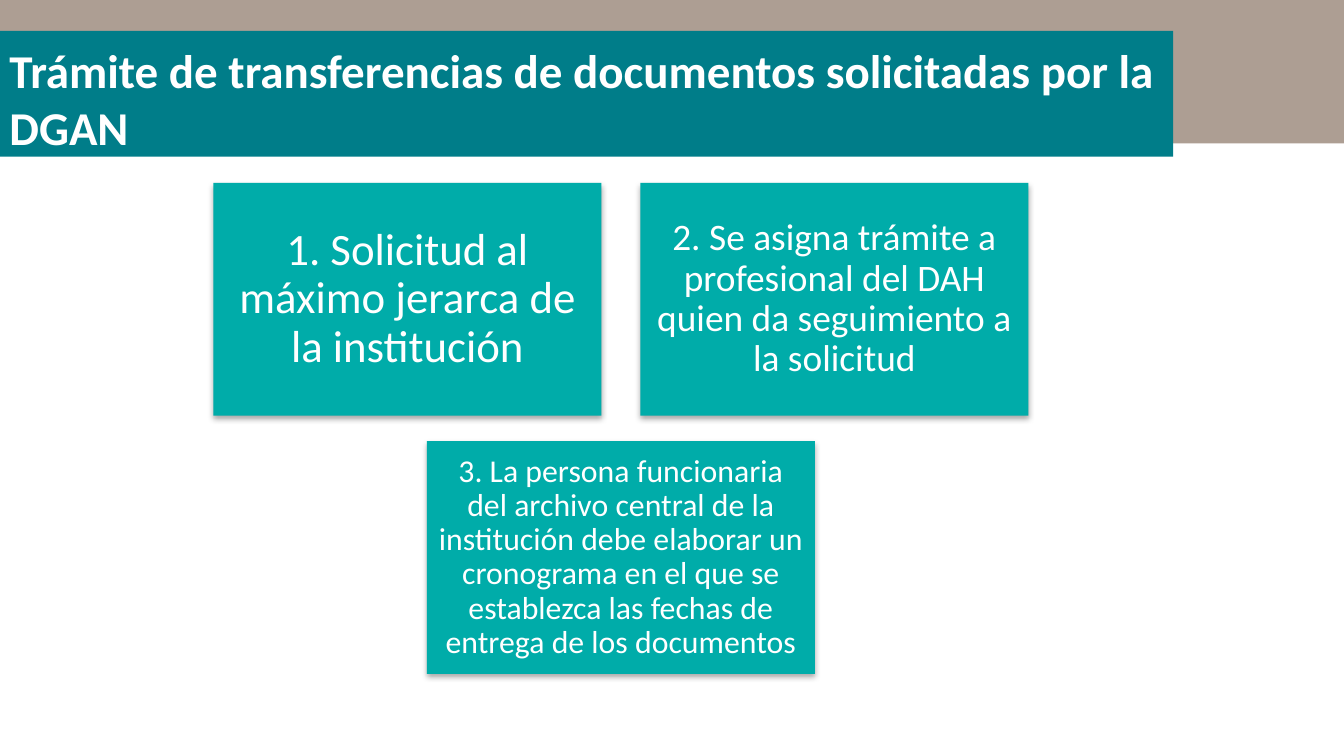
from lxml import etree
from pptx import Presentation
from pptx.dml.color import RGBColor
from pptx.enum.shapes import MSO_SHAPE
from pptx.enum.text import MSO_ANCHOR, PP_ALIGN
from pptx.oxml.ns import qn
from pptx.util import Pt

RECTANGLE = MSO_SHAPE.RECTANGLE
MIDDLE = MSO_ANCHOR.MIDDLE
CENTER, LEFT = PP_ALIGN.CENTER, PP_ALIGN.LEFT
FONT = "Calibri"
COLORS = {"band": "AD9E93", "title": "007D89", "step": "00ACA9",
          "text": "FFFFFF", "shadow": "000000"}

TITLE = "Trámite de transferencias de documentos solicitadas por la DGAN"
# Rows of steps: text, font size, inset
STEP_ROWS = [
    [("1. Solicitud al máximo jerarca de la institución", 24, 7.2),
     ("2. Se asigna trámite a profesional del DAH quien da seguimiento "
      "a la solicitud", 20, 5.76)],
    [("3. La persona funcionaria del archivo central de la institución debe "
      "elaborar un cronograma en el que se establezca las fechas de entrega "
      "de los documentos", 17, 5.04)],
]


def add_rectangle(slide, left, top, width, height, color):
    shape = slide.shapes.add_shape(RECTANGLE, Pt(left), Pt(top), Pt(width), Pt(height))
    shape.shadow.inherit = False
    shape.fill.solid()
    shape.fill.fore_color.rgb = RGBColor.from_string(COLORS[color])
    shape.line.fill.background()
    return shape


def add_soft_shadow(shape):
    effects = shape._element.spPr.find(qn("a:effectLst"))
    shadow = etree.SubElement(effects, qn("a:outerShdw"), blurRad=str(Pt(3.1)),
                              dist=str(Pt(1.8)), dir="5400000", rotWithShape="0")
    color = etree.SubElement(shadow, qn("a:srgbClr"), val=COLORS["shadow"])
    etree.SubElement(color, qn("a:alpha"), val="35000")


def write_text(shape, text, size, alignment, inset, bold=False):
    frame = shape.text_frame
    frame.word_wrap = True
    frame.vertical_anchor = MIDDLE
    frame.margin_left = frame.margin_right = Pt(inset)
    frame.margin_top = frame.margin_bottom = Pt(min(inset, 7.2))
    paragraph = frame.paragraphs[0]
    paragraph.text = text
    paragraph.alignment = alignment
    paragraph.font.name = FONT
    paragraph.font.size = Pt(size)
    paragraph.font.bold = bold
    paragraph.font.color.rgb = RGBColor.from_string(COLORS["text"])
    return paragraph


def add_header(slide, left, top, width, height):
    # Full-width band with the title bar over it
    add_rectangle(slide, left, top, width, height, "band")
    add_rectangle(slide, left, top + 16.5, 628.5, 67.5, "title")
    title = slide.shapes.add_textbox(Pt(left - 2), Pt(top + 18.7), Pt(648), Pt(67.7))
    write_text(title, TITLE, 25.2, LEFT, 7.2, bold=True)


def add_steps(slide, left, top, width, height):
    # Equal boxes, each row centred in the region
    column_gap, row_gap = 20.8, 13.7
    columns = max(len(row) for row in STEP_ROWS)
    box_width = (width - column_gap * (columns - 1)) / columns
    box_height = (height - row_gap * (len(STEP_ROWS) - 1)) / len(STEP_ROWS)
    for row_index, row in enumerate(STEP_ROWS):
        row_width = len(row) * (box_width + column_gap) - column_gap
        row_left = left + (width - row_width) / 2
        box_top = top + row_index * (box_height + row_gap)
        for column, (text, size, inset) in enumerate(row):
            box_left = row_left + column * (box_width + column_gap)
            box = add_rectangle(slide, box_left, box_top, box_width, box_height, "step")
            add_soft_shadow(box)
            write_text(box, text, size, CENTER, inset).line_spacing = 0.9


def main():
    presentation = Presentation()
    presentation.slide_width, presentation.slide_height = Pt(720), Pt(405)
    slide = presentation.slides.add_slide(presentation.slide_layouts[6])
    add_header(slide, 0, 0, 720, 76.8)
    add_steps(slide, 114.3, 98, 436.7, 263)
    presentation.save("out.pptx")


if __name__ == "__main__":
    main()
